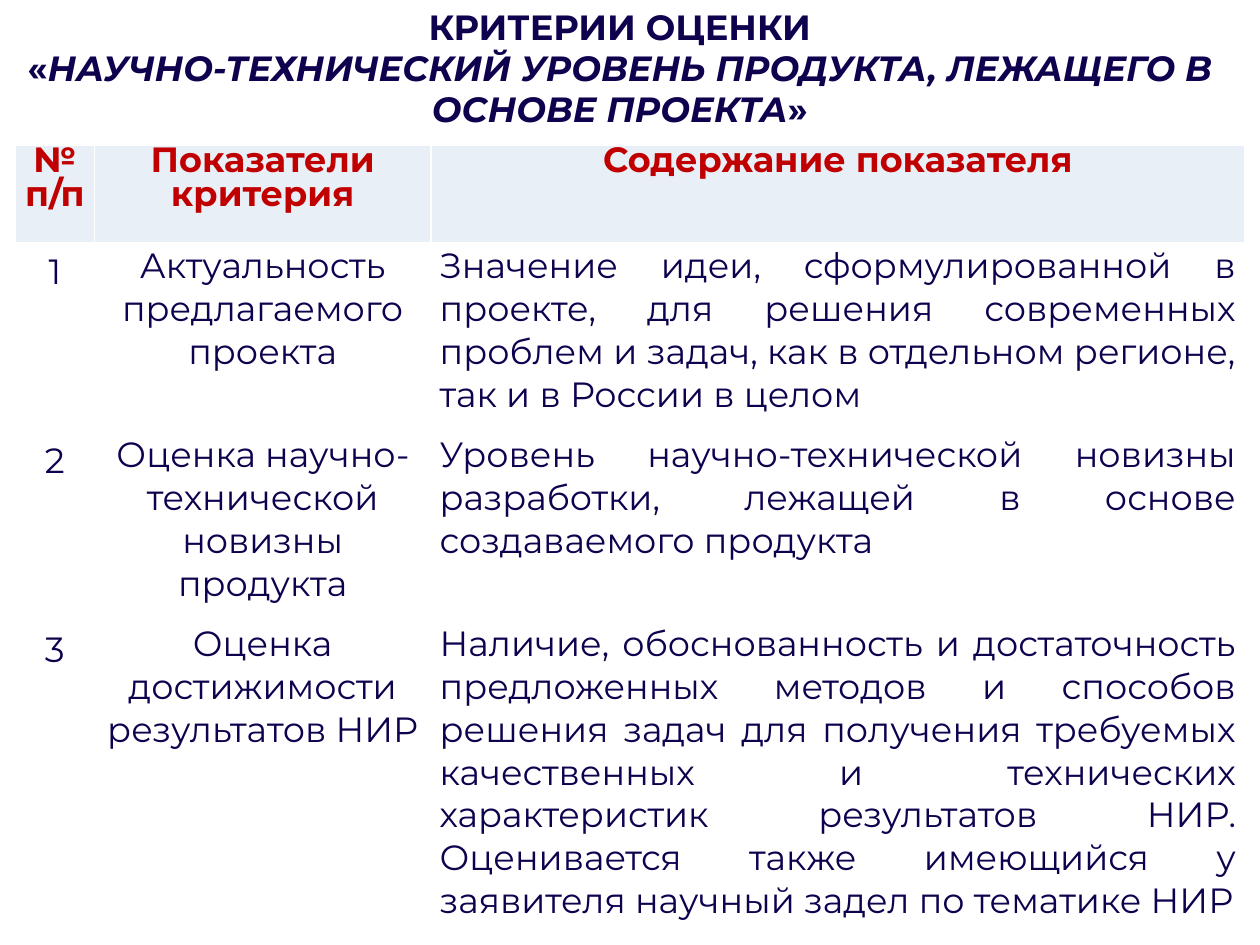
from lxml import etree
from pptx import Presentation
from pptx.dml.color import RGBColor
from pptx.enum.text import MSO_ANCHOR, PP_ALIGN
from pptx.oxml.ns import qn
from pptx.util import Inches, Pt

CENTER, JUSTIFY = PP_ALIGN.CENTER, PP_ALIGN.JUSTIFY
BOTTOM = MSO_ANCHOR.BOTTOM
TITLE_ONLY = 5
FONT = "Montserrat"
NAVY, RED, PALE, WHITE = "10014F", "C00000", "E9EFF7", "FFFFFF"

TITLE = [
    [("КРИТЕРИИ ОЦЕНКИ", False)],
    [("«", False),
     ("НАУЧНО-ТЕХНИЧЕСКИЙ УРОВЕНЬ ПРОДУКТА, ЛЕЖАЩЕГО В ОСНОВЕ ПРОЕКТА", True),
     ("»", False)],
]
HEADER = ["№\nп/п", "Показатели критерия", "Содержание показателя"]
CRITERIA = [
    ("Актуальность предлагаемого проекта",
     "Значение идеи, сформулированной в проекте, для решения современных "
     "проблем и задач, как в отдельном регионе, так и в России в целом"),
    ("Оценка научно-технической новизны продукта",
     "Уровень научно-технической новизны разработки, лежащей в основе "
     "создаваемого продукта"),
    ("Оценка достижимости результатов НИР",
     "Наличие, обоснованность и достаточность предложенных методов и способов "
     "решения задач для получения требуемых качественных и технических "
     "характеристик результатов НИР. Оценивается также имеющийся у заявителя "
     "научный задел по тематике НИР"),
]
COL_WIDTHS = [0.63, 2.67, 6.46]
ROW_HEIGHTS = [0.79, 1.5, 1.5, 2.39]


def rgb(value):
    return RGBColor.from_string(value)


def set_attrs(obj, **values):
    for name, value in values.items():
        setattr(obj, name, value)


def add_run(p, text, color, bold=False, italic=False):
    r = p.add_run()
    r.text = text
    set_attrs(r.font, name=FONT, size=Pt(20), bold=bold, italic=italic)
    r.font.color.rgb = rgb(color)


def place_title(s, left, top, width, height):
    sp = s.shapes.title
    set_attrs(sp, left=left, top=top, width=width, height=height)
    tf = sp.text_frame
    set_attrs(tf, word_wrap=True, vertical_anchor=BOTTOM,
              margin_bottom=Inches(0.08))
    for i, parts in enumerate(TITLE):
        p = tf.add_paragraph() if i else tf.paragraphs[0]
        set_attrs(p, alignment=CENTER, line_spacing=0.98,
                  space_before=Pt(0))
        for text, italic in parts:
            add_run(p, text, NAVY, bold=True, italic=italic)


def set_borders(cell, bottom):
    """Draw white rules round a cell; bottom is the lower rule in points."""
    tc_pr = cell._tc.get_or_add_tcPr()
    for i, (side, width) in enumerate(zip("LRTB", (1, 1, 1, bottom))):
        ln = etree.Element(qn(f"a:ln{side}"), w=str(Pt(width)))
        fill = etree.SubElement(ln, qn("a:solidFill"))
        etree.SubElement(fill, qn("a:srgbClr"), val=WHITE)
        tc_pr.insert(i, ln)


def fill_cell(cell, text, header, align):
    for i, line in enumerate(text.split("\n")):
        tf = cell.text_frame
        p = tf.add_paragraph() if i else tf.paragraphs[0]
        set_attrs(p, alignment=align, line_spacing=0.8 if header else 1.0)
        add_run(p, line, RED if header else NAVY, bold=header)
    if header:
        cell.fill.solid()
        cell.fill.fore_color.rgb = rgb(PALE)
    else:
        cell.fill.background()
    set_borders(cell, 3 if header else 1)


def place_table(s, left, top, width, height):
    rows = [HEADER] + [(str(n), *c) for n, c in enumerate(CRITERIA, 1)]
    table = s.shapes.add_table(len(rows), len(HEADER),
                               left, top, width, height).table
    for col, size in zip(table.columns, COL_WIDTHS):
        col.width = Inches(size)
    for row, size in zip(table.rows, ROW_HEIGHTS):
        row.height = Inches(size)
    for y, texts in enumerate(rows):
        for x, text in enumerate(texts):
            cell = table.cell(y, x)
            header = y == 0
            if header or x:
                set_attrs(cell, margin_left=Inches(0.07), margin_top=0,
                          margin_right=Inches(0.07), margin_bottom=0)
            fill_cell(cell, text, header,
                      JUSTIFY if x == 2 and not header else CENTER)


def main():
    prs = Presentation()
    set_attrs(prs, slide_width=Inches(10), slide_height=Inches(7.5))
    s = prs.slides.add_slide(prs.slide_layouts[TITLE_ONLY])
    place_title(s, Inches(0.04), Inches(-0.19), Inches(9.76), Inches(1.31))
    place_table(s, Inches(0.12), Inches(1.15),
                Inches(sum(COL_WIDTHS)), Inches(sum(ROW_HEIGHTS)))
    prs.save("out.pptx")


if __name__ == "__main__":
    main()
